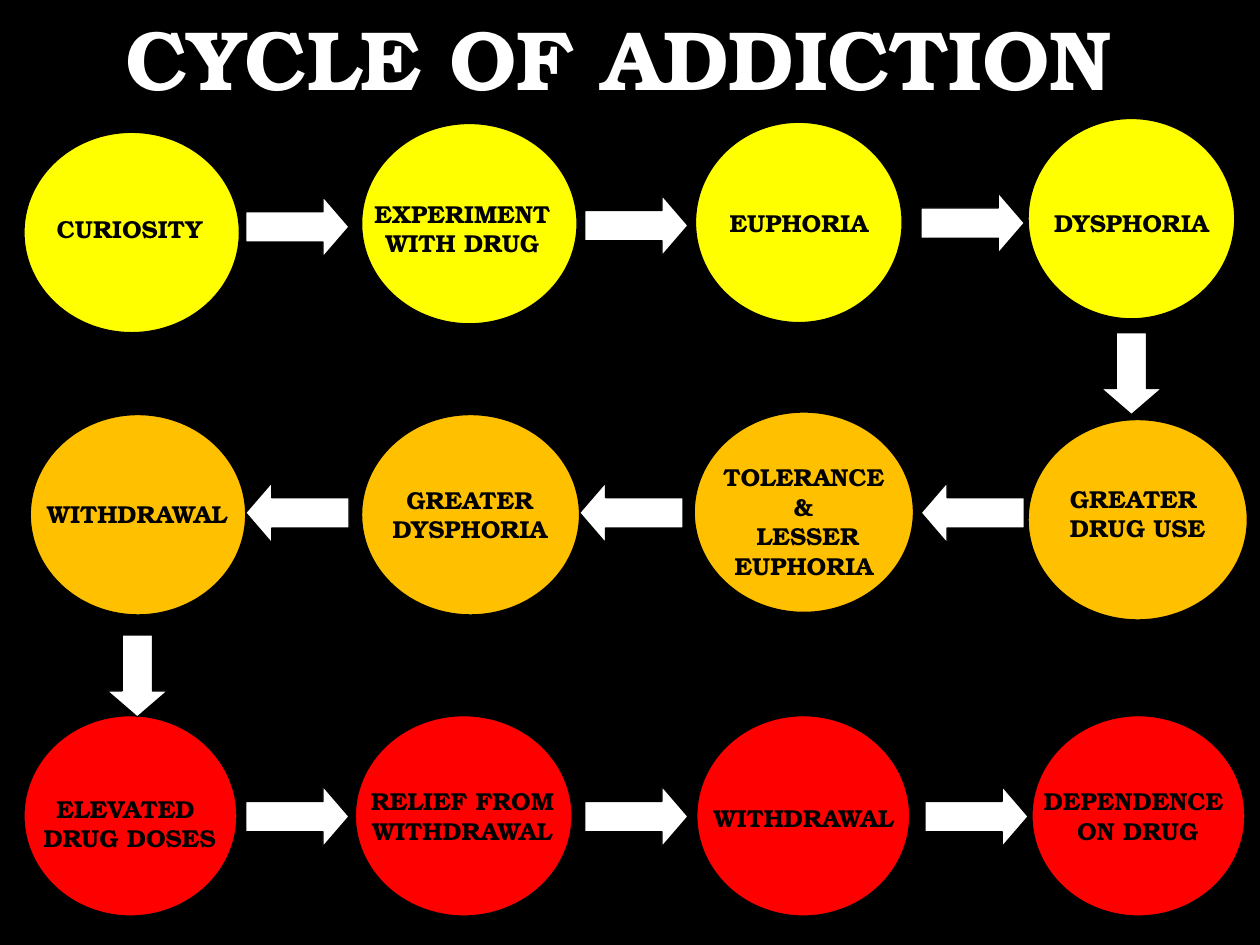
from dataclasses import dataclass

from pptx import Presentation
from pptx import util as u
from pptx.dml.color import RGBColor
from pptx.enum import shapes, text

PX = u.Inches(1) // 100  # 100 px to the inch
FONT = "TeX Gyre Bonum"
BLACK, WHITE = "000000", "FFFFFF"
YELLOW, AMBER, RED = "FFFF00", "FFC000", "FF0000"
ROUND, LABEL, SHAFT = 159, 214, 48  # circle height, label width, arrow width
RIGHT, LEFT, DOWN = 270, 90, 0  # turns of a down arrow


@dataclass
class Step:
    """A circle at (x, y) with its label box at (tx, ty)."""
    x: int
    y: int
    w: int
    tx: int
    ty: int
    th: int
    words: str


@dataclass
class Arrow:
    """An arrow before its turn."""
    x: int
    y: int
    turn: int
    size: int = 82


ROWS = {
    YELLOW: [
        Step(19, 105, 171, -4, 165, 48, "CURIOSITY"),
        Step(287, 98, 171, 260, 153, 74, "EXPERIMENT WITH DRUG"),
        Step(552, 97, 164, 527, 160, 48, "EUPHORIA"),
        Step(816, 94, 164, 791, 160, 48, "DYSPHORIA"),
    ],
    AMBER: [
        Step(816, 333, 174, 796, 379, 66, "GREATER \nDRUG USE"),
        Step(551, 327, 174, 531, 362, 89, "TOLERANCE\n&\n LESSER\nEUPHORIA"),
        Step(287, 329, 173, 266, 380, 98, "GREATER\nDYSPHORIA"),
        Step(24, 329, 171, 2, 391, 48, "WITHDRAWAL"),
    ],
    RED: [
        Step(19, 568, 169, -4, 625, 48, "ELEVATED \nDRUG DOSES"),
        Step(282, 568, 172, 260, 619, 65, "RELIEF FROM WITHDRAWAL"),
        Step(553, 568, 169, 531, 632, 48, "WITHDRAWAL"),
        Step(819, 568, 169, 796, 619, 72, "DEPENDENCE \nON DRUG"),
    ],
}

ARROWS = [
    Arrow(212, 139, RIGHT), Arrow(481, 138, RIGHT), Arrow(748, 136, RIGHT),
    Arrow(874, 264, DOWN, 65),
    Arrow(748, 366, LEFT), Arrow(477, 366, LEFT), Arrow(212, 366, LEFT),
    Arrow(85, 504, DOWN, 65),
    Arrow(212, 607, RIGHT), Arrow(481, 607, RIGHT), Arrow(751, 607, RIGHT),
]


def rgb(code: str) -> RGBColor:
    return RGBColor.from_string(code)


def box(x: int, y: int, w: int, h: int) -> list[int]:
    return [n * PX for n in (x, y, w, h)]


def form(slide, kind, area: list[int], color: str):
    shape = slide.shapes.add_shape(kind, *area)
    shape.shadow.inherit = False
    shape.fill.solid()
    shape.fill.fore_color.rgb = rgb(color)
    shape.line.color.rgb = rgb(BLACK)
    shape.line.width = u.Pt(0.75)
    return shape


def write(slide, area: list[int], words: str, size: int, color: str,
          anchor=text.MSO_ANCHOR.TOP) -> None:
    frame = slide.shapes.add_textbox(*area).text_frame
    frame.word_wrap = True
    frame.vertical_anchor = anchor
    frame.text = words
    style = {"name": FONT, "size": u.Pt(size), "bold": True}
    for para in frame.paragraphs:
        para.alignment = text.PP_ALIGN.CENTER
        for run in para.runs:
            for key, value in style.items():
                setattr(run.font, key, value)
            run.font.color.rgb = rgb(color)


def draw_step(slide, step: Step, color: str) -> None:
    form(slide, shapes.MSO_SHAPE.OVAL,
         box(step.x, step.y, step.w, ROUND), color)
    write(slide, box(step.tx, step.ty, LABEL, step.th), step.words, 14, BLACK)


def draw_arrow(slide, arrow: Arrow) -> None:
    shape = form(slide, shapes.MSO_SHAPE.DOWN_ARROW,
                 box(arrow.x, arrow.y, SHAFT, arrow.size), WHITE)
    shape.adjustments[0] = 0.5
    shape.adjustments[1] = 0.43
    shape.rotation = arrow.turn


def main() -> None:
    deck = Presentation()
    deck.slide_width, deck.slide_height = 1000 * PX, 750 * PX
    slide = deck.slides.add_slide(deck.slide_layouts[6])
    slide.background.fill.solid()
    slide.background.fill.fore_color.rgb = rgb(BLACK)

    # Title
    write(slide, box(85, 0, 812, 91), "CYCLE OF ADDICTION", 48, WHITE,
          text.MSO_ANCHOR.MIDDLE)

    # Stages, one colour a row
    for color, steps in ROWS.items():
        for step in steps:
            draw_step(slide, step, color)

    # Arrows between the stages
    for arrow in ARROWS:
        draw_arrow(slide, arrow)

    deck.save("out.pptx")


if __name__ == "__main__":
    main()
